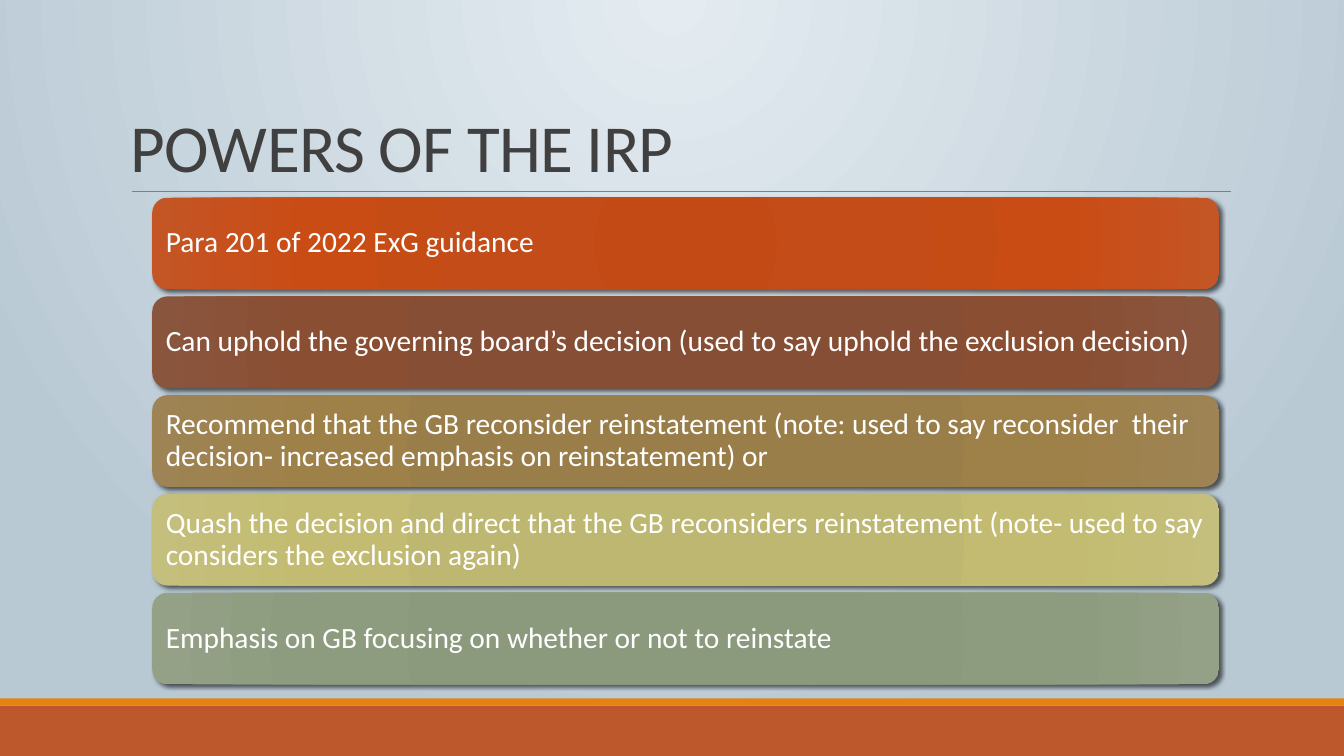
from lxml import etree
from pptx import Presentation
from pptx import util as u
from pptx.dml.color import RGBColor
from pptx.enum import shapes, text
from pptx.oxml import ns

Inches = u.Inches


def color(code):
    return RGBColor.from_string(code)


def node(parent, tag, **attrs):
    """Append a DrawingML element."""
    item = etree.SubElement(parent, ns.qn("a:" + tag))
    for key, value in attrs.items():
        item.set(key, str(value))
    return item


def blend(empty, stops, focus):
    """Turn an empty fill into a radial gradient."""
    fill = etree.Element(ns.qn("a:gradFill"), rotWithShape="1")
    row = node(fill, "gsLst")
    for place, code in stops:
        node(node(row, "gs", pos=place * 1000), "srgbClr", val=code)
    way = node(fill, "path", path="circle")
    node(way, "fillToRect", **{k: v * 1000 for k, v in zip("ltrb", focus)})
    empty.getparent().replace(empty, fill)


class Deck:
    font = "Calibri"
    light = "FFFFFF"
    dark = "404040"

    def __init__(self, show):
        self.slide = show.slides.add_slide(show.slide_layouts[6])
        self.items = self.slide.shapes

    def back(self, stops, focus):
        self.slide.background.fill.background()
        blend(next(self.slide.element.iter(ns.qn("a:noFill"))), stops, focus)

    def shape(self, kind, box):
        item = self.items.add_shape(kind, *map(Inches, box))
        item.shadow.inherit = False
        item.line.fill.background()
        return item

    def band(self, box, code):
        item = self.shape(shapes.MSO_SHAPE.RECTANGLE, box)
        item.fill.solid()
        item.fill.fore_color.rgb = color(code)

    def rule(self, left, right, top, code, width):
        ends = map(Inches, (left, top, right, top))
        item = self.items.add_connector(shapes.MSO_CONNECTOR.STRAIGHT, *ends)
        item.line.color.rgb = color(code)
        item.line.width = u.Pt(width)
        node(item.element.spPr, "effectLst")

    def label(self, item, words, size, code, space, anchor):
        frame = item.text_frame
        frame.word_wrap = True
        frame.vertical_anchor = anchor
        frame.text = words
        para = frame.paragraphs[0]
        para.alignment = text.PP_ALIGN.LEFT
        para.line_spacing = space
        run = para.runs[0]
        run.font.name = self.font
        run.font.size = u.Pt(size)
        run.font.color.rgb = color(code)
        return run

    def title(self, box, words):
        item = self.items.add_textbox(*map(Inches, box))
        run = self.label(item, words, 48, self.dark, 0.85,
                         text.MSO_ANCHOR.BOTTOM)
        run.font._element.set("spc", "-50")

    def card(self, box, words, stops):
        item = self.shape(shapes.MSO_SHAPE.ROUNDED_RECTANGLE, box)
        item.fill.background()
        props = item.element.spPr
        blend(props.find(ns.qn("a:noFill")), stops, (100, 100, 100, 100))
        # Soft shadow to the lower right
        glow = node(props.find(ns.qn("a:effectLst")), "outerShdw",
                    blurRad=u.Pt(3), dist=u.Pt(2), dir=45 * 60000,
                    algn="ctr", rotWithShape=0)
        node(node(glow, "srgbClr", val="000000"), "alpha", val=60000)
        frame = item.text_frame
        frame.margin_left = frame.margin_right = Inches(0.09)
        frame.margin_top = frame.margin_bottom = Inches(0.09)
        self.label(item, words, 21, self.light, 0.9, text.MSO_ANCHOR.MIDDLE)


POWERS = [
    ("Para 201 of 2022 ExG guidance",
     ("C44A15", "C34C18", "C94C15", "C45525")),
    ("Can uphold the governing board’s decision (used to say uphold the "
     "exclusion decision)",
     ("874C32", "864E34", "8A4E33", "8A553D")),
    ("Recommend that the GB reconsider reinstatement (note: used to say "
     "reconsider  their decision- increased emphasis on reinstatement) or",
     ("9A7D48", "9A7E4A", "9E8049", "9E8454")),
    ("Quash the decision and direct that the GB reconsiders reinstatement "
     "(note- used to say considers the exclusion again)",
     ("BEB76E", "BEB771", "C3BB71", "C5BF7D")),
    ("Emphasis on GB focusing on whether or not to reinstate",
     ("8A987B", "8B997D", "8D9C7E", "94A187")),
]


def main():
    show = Presentation()
    show.slide_width = Inches(13.33)
    show.slide_height = Inches(7.5)
    deck = Deck(show)

    # Backdrop and footer bands
    deck.back([(0, "E4ECF1"), (100, "B9C9D4")], (43, 0, 43, 100))
    deck.band((0, 7, 13.33, 0.5), "BD582C")
    deck.band((0, 6.93, 13.33, 0.07), "E48312")

    # Heading
    deck.rule(1.31, 12.21, 1.9, "808080", 0.5)
    deck.title((1.2, 0.31, 11, 1.59), "POWERS OF THE IRP")

    # One card for each power
    for i, (words, codes) in enumerate(POWERS):
        deck.card((1.51, 1.96 + 0.98 * i, 10.58, 0.91), words,
                  list(zip((0, 34, 70, 100), codes)))

    show.save("out.pptx")


if __name__ == "__main__":
    main()
